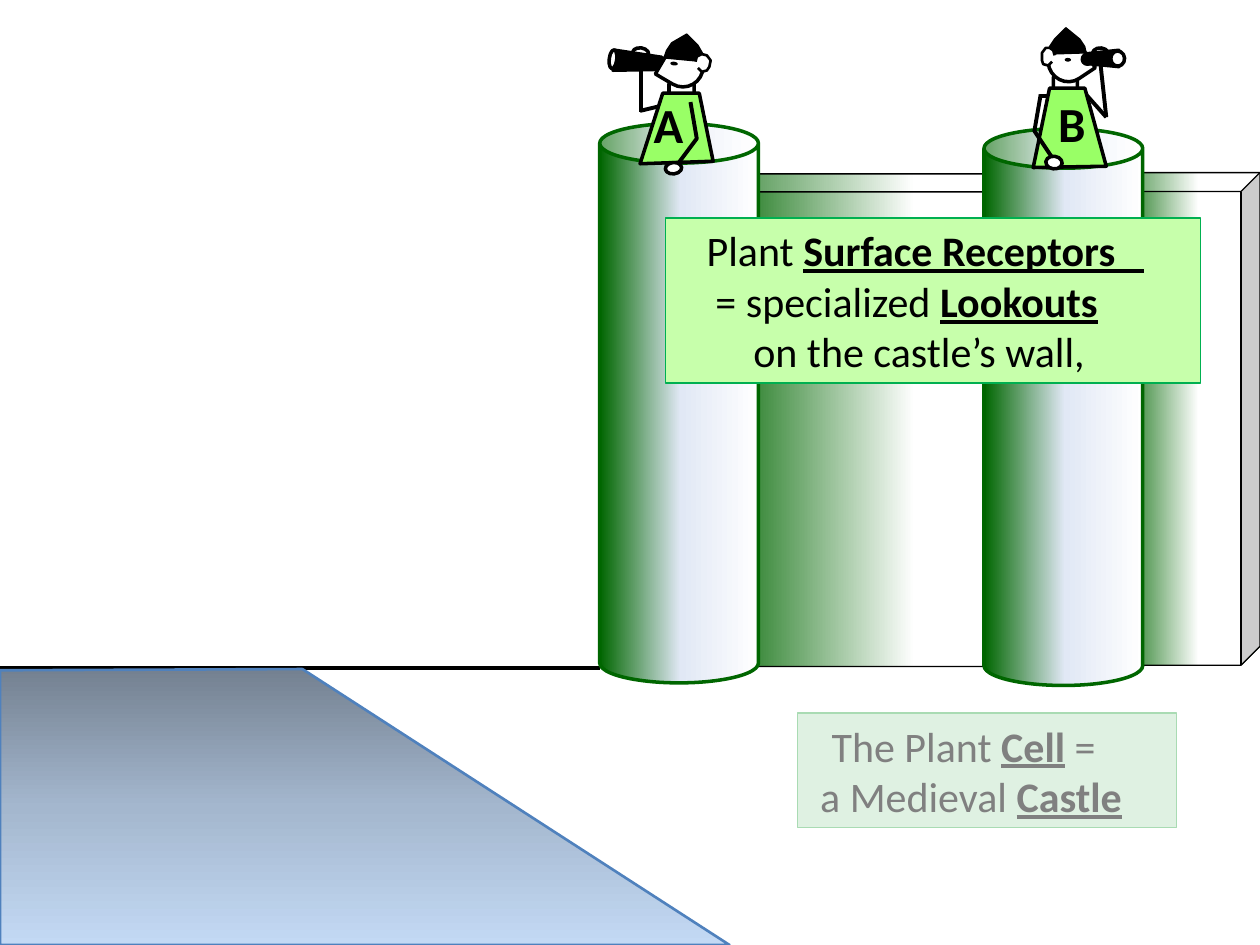
from lxml import etree
from pptx import Presentation
from pptx.dml.color import RGBColor
from pptx.enum import shapes, text
from pptx.oxml import ns
from pptx.util import Inches, Pt

BLACK = RGBColor(0x00, 0x00, 0x00)
WHITE = RGBColor(0xFF, 0xFF, 0xFF)
GREEN = RGBColor(0x00, 0x66, 0x00)
PALE_BLUE = RGBColor(0xE1, 0xE8, 0xF5)
TUNIC = RGBColor(0x99, 0xFF, 0x66)
NOTE_FILL = RGBColor(0xC7, 0xFF, 0xAB)
NOTE_LINE = RGBColor(0x00, 0xB0, 0x50)
FADED_FILL = RGBColor(0xDF, 0xF1, 0xE2)
FADED_LINE = RGBColor(0xA9, 0xDB, 0xB3)
FADED_TEXT = RGBColor(0x80, 0x80, 0x80)
MOAT_LINE = RGBColor(0x4F, 0x81, 0xBD)
MOAT_STOPS = [(0, RGBColor(0x74, 0x81, 0x91)), (50, RGBColor(0xA4, 0xB7, 0xCE)),
              (100, RGBColor(0xC3, 0xD9, 0xF4))]
WALL_STOPS = [(0, GREEN), (58, WHITE), (100, WHITE)]
TOWER_STOPS = [(0, GREEN), (51, PALE_BLUE), (100, WHITE)]

KIND = shapes.MSO_SHAPE
FONT = "Calibri"

SOLIDS = {
    "neck": (KIND.ROUNDED_RECTANGLE, WHITE, 2),
    "head": (KIND.TEAR, WHITE, 2),
    "eye": (KIND.OVAL, BLACK, 0),
    "hand": (KIND.OVAL, WHITE, 2),
    "barrel": (KIND.FLOWCHART_MANUAL_OPERATION, BLACK, 2),
    "lens": (KIND.OVAL, WHITE, 2),
    "eyepiece": (KIND.OVAL, BLACK, 2),
}
OUTLINES = {
    "hat": (BLACK, 0.75, True),
    "ear": (WHITE, 1.5, False),
    "tunic": (TUNIC, 2, True),
    "sleeve": (None, 2.25, False),
}

LOOKOUT_A = [
    ("neck", (0.52, 0.38, 0.2, 0.1), 0),
    ("hand", (0.23, 0.11, 0.13, 0.09), 8),
    ("arm", (0.75, 0.5), (0.29, 0.61)),
    ("tunic", [(0.87, 1.01), (0.29, 1.03), (0.47, 0.47), (0.76, 0.47)]),
    ("arm", (0.3, 0.24), (0.3, 0.62)),
    ("barrel", (0.19, 0.03, 0.16, 0.38), 273.7),
    ("lens", (0, 0.17, 0.15, 0.06), 276.9),
    ("eyepiece", (0.41, 0.21, 0.09, 0.05), 273.7),
    ("sleeve", [(0.69, 0.54), (0.74, 0.83), (0.59, 1.03)]),
    ("hand", (0.49, 1.02, 0.13, 0.09), 173.3),
    ("letter", (0.3, 0.43, 0.44, 0.57), "A"),
    ("head", (0.47, 0.1, 0.32, 0.32), 210.4),
    ("hat", [(0.66, 0), (0.75, 0.09), (0.79, 0.16), (0.8, 0.22),
             (0.48, 0.19), (0.5, 0.13), (0.54, 0.07)]),
    ("ear", [(0.73, 0.22), (0.74, 0.18), (0.78, 0.16), (0.82, 0.17), (0.85, 0.21),
             (0.84, 0.26), (0.82, 0.29), (0.78, 0.3), (0.75, 0.27)]),
    ("eye", (0.53, 0.22, 0.06, 0.03), 5.9),
]
LOOKOUT_B = [
    ("neck", (0.16, 0.38, 0.19, 0.11), 0),
    ("head", (0.12, 0.11, 0.31, 0.32), 146.3),
    ("hat", [(0.26, 0), (0.17, 0.09), (0.13, 0.15), (0.11, 0.21),
             (0.42, 0.2), (0.41, 0.15), (0.37, 0.09)]),
    ("ear", [(0.17, 0.22), (0.16, 0.18), (0.13, 0.16), (0.1, 0.16), (0.07, 0.2),
             (0.07, 0.26), (0.08, 0.29), (0.12, 0.3), (0.15, 0.27)]),
    ("eye", (0.25, 0.24, 0.05, 0.03), 1),
    ("arm", (0.58, 0.71), (0.42, 0.53)),
    ("hand", (0.47, 0.16, 0.13, 0.1), 186.7),
    ("arm", (0.39, 0.54), (0.05, 0.54)),
    ("arm", (0.53, 0.25), (0.58, 0.71)),
    ("tunic", [(0, 1.11), (0.58, 1.1), (0.41, 0.48), (0.13, 0.48)]),
    ("sleeve", [(0.06, 0.53), (0.01, 0.82), (0.15, 1.03)]),
    ("hand", (0.1, 1.02, 0.13, 0.1), 186.7),
    ("barrel", (0.49, 0.12, 0.13, 0.25), 89.7),
    ("lens", (0.61, 0.19, 0.12, 0.11), 86.5),
    ("eyepiece", (0.39, 0.21, 0.08, 0.08), 86.5),
    ("letter", (0.1, 0.47, 0.42, 0.61), "B"),
]


def paint(sp, fill, line, width):
    """Give a shape a solid or empty fill and a solid or empty outline."""
    sp.shadow.inherit = False
    if fill is None:
        sp.fill.background()
    elif isinstance(fill, list):
        shade(sp, fill)
    else:
        sp.fill.solid()
        sp.fill.fore_color.rgb = fill
    if width:
        sp.line.color.rgb = line
        sp.line.width = Pt(width)
    else:
        sp.line.fill.background()


def shade(sp, stops, angle=0):
    """Fill a shape with a linear gradient of (percent, colour) stops."""
    sp.fill.gradient()
    sp.fill.gradient_angle = angle
    gs_lst = sp._element.spPr.find(".//" + ns.qn("a:gsLst"))
    for gs in list(gs_lst):
        gs_lst.remove(gs)
    for pos, color in stops:
        gs = etree.SubElement(gs_lst, ns.qn("a:gs"), pos=str(pos * 1000))
        etree.SubElement(gs, ns.qn("a:srgbClr"), val=str(color))


def add_solid(tree, kind, box, fill, line, width):
    """Add a painted preset shape."""
    sp = tree.add_shape(kind, *map(Inches, box))
    paint(sp, fill, line, width)
    return sp


def add_outline(tree, points, fill, line, width, close=True):
    """Add a painted freeform through the points."""
    pts = [(Inches(x), Inches(y)) for x, y in points]
    builder = tree.build_freeform(*pts[0])
    builder.add_line_segments(pts[1:], close=close)
    sp = builder.convert_to_shape()
    paint(sp, fill, line, width)
    return sp


def add_line(tree, start, end):
    """Add a straight black line."""
    ln = tree.add_connector(shapes.MSO_CONNECTOR.STRAIGHT, *map(Inches, (*start, *end)))
    ln.line.color.rgb = BLACK
    ln.line.width = Pt(2.25)
    etree.SubElement(ln._element.spPr, ns.qn("a:effectLst"))


def add_wall(s, box, depth):
    """Add a stretch of castle wall."""
    sp = add_solid(s.shapes, KIND.CUBE, box, WALL_STOPS, BLACK, 0.75)
    sp.adjustments[0] = depth


def add_ground(s, left, top, right, bottom):
    """Add the ground line and the moat below it."""
    add_line(s.shapes, (left, top), (right, top))
    bank = [(left, top + 0.02), (left + 2.4, top + 0.01),
            (left + 5.79, bottom), (left, bottom)]
    sp = add_outline(s.shapes, bank, MOAT_STOPS, MOAT_LINE, 1.5)
    shade(sp, MOAT_STOPS, 270)


def add_lookout(s, left, top, parts, mirrored=False):
    """Add a grouped lookout figure at the given corner."""
    tree = s.shapes.add_group_shape().shapes
    for name, place, *extra in parts:
        if name in OUTLINES:
            fill, width, close = OUTLINES[name]
            points = [(left + x, top + y) for x, y in place]
            add_outline(tree, points, fill, BLACK, width, close)
            continue
        x, y, *size = place
        corner = (left + x, top + y)
        if name == "arm":
            add_line(tree, corner, (left + extra[0][0], top + extra[0][1]))
        elif name == "letter":
            tf = tree.add_textbox(*map(Inches, (*corner, *size))).text_frame
            tf.word_wrap = False
            p = tf.paragraphs[0]
            p.text = extra[0]
            p.font.name, p.font.size, p.font.bold = FONT, Pt(28), True
            p.font.color.rgb = BLACK
        else:
            kind, fill, width = SOLIDS[name]
            sp = add_solid(tree, kind, (*corner, *size), fill, BLACK, width)
            sp.rotation = extra[0]
            if mirrored and name == "head":
                sp._element.spPr.xfrm.set("flipH", "1")


def write_lines(sp, lines, color):
    """Write indented lines whose odd pieces are bold and underlined."""
    tf = sp.text_frame
    tf.word_wrap = True
    tf.vertical_anchor = text.MSO_ANCHOR.MIDDLE
    for i, (indent, *pieces) in enumerate(lines):
        p = tf.add_paragraph() if i else tf.paragraphs[0]
        p.alignment = text.PP_ALIGN.LEFT
        p._p.get_or_add_pPr().set("marL", str(Inches(indent)))
        p.font.name, p.font.size = FONT, Pt(24)
        p.font.color.rgb = color
        for n, piece in enumerate(pieces):
            r = p.add_run()
            r.text = piece
            if n % 2:
                r.font.bold = r.font.underline = True


def add_title(s, box):
    """Place the faded title."""
    sp = s.shapes.title
    sp.left, sp.top, sp.width, sp.height = map(Inches, box)
    sp.fill.solid()
    sp.fill.fore_color.rgb = FADED_FILL
    sp.line.color.rgb = FADED_LINE
    sp.line.width = Pt(0.75)
    write_lines(sp, [(0.17, "The Plant ", "Cell", " ="),
                     (0.08, "a Medieval ", "Castle")], FADED_TEXT)


def add_note(s, box):
    """Add the note on surface receptors."""
    sp = add_solid(s.shapes, KIND.RECTANGLE, box, NOTE_FILL, NOTE_LINE, 0.75)
    write_lines(sp, [(0.23, "Plant ", "Surface Receptors   "),
                     (0.3, "= specialized ", "Lookouts"),
                     (0.6, "on the castle’s wall,")], BLACK)


def main():
    """Build the castle slide."""
    prs = Presentation()
    prs.slide_width, prs.slide_height = Inches(10), Inches(7.5)
    s = prs.slides.add_slide(prs.slide_layouts[5])
    add_title(s, (6.33, 5.66, 3.01, 0.91))
    add_wall(s, (8.84, 1.37, 1.16, 3.91), 0.13)
    add_wall(s, (5.6, 1.38, 2.86, 3.91), 0.05)
    add_ground(s, 0, 5.3, 4.76, 7.5)
    for box in ((4.76, 0.98, 1.26, 4.44), (7.81, 1.02, 1.26, 4.42)):
        add_solid(s.shapes, KIND.CAN, box, TOWER_STOPS, GREEN, 2)
    add_lookout(s, 8.2, 0.22, LOOKOUT_B, mirrored=True)
    add_lookout(s, 4.79, 0.27, LOOKOUT_A)
    add_note(s, (5.28, 1.73, 4.25, 1.31))
    prs.save("out.pptx")


if __name__ == "__main__":
    main()
